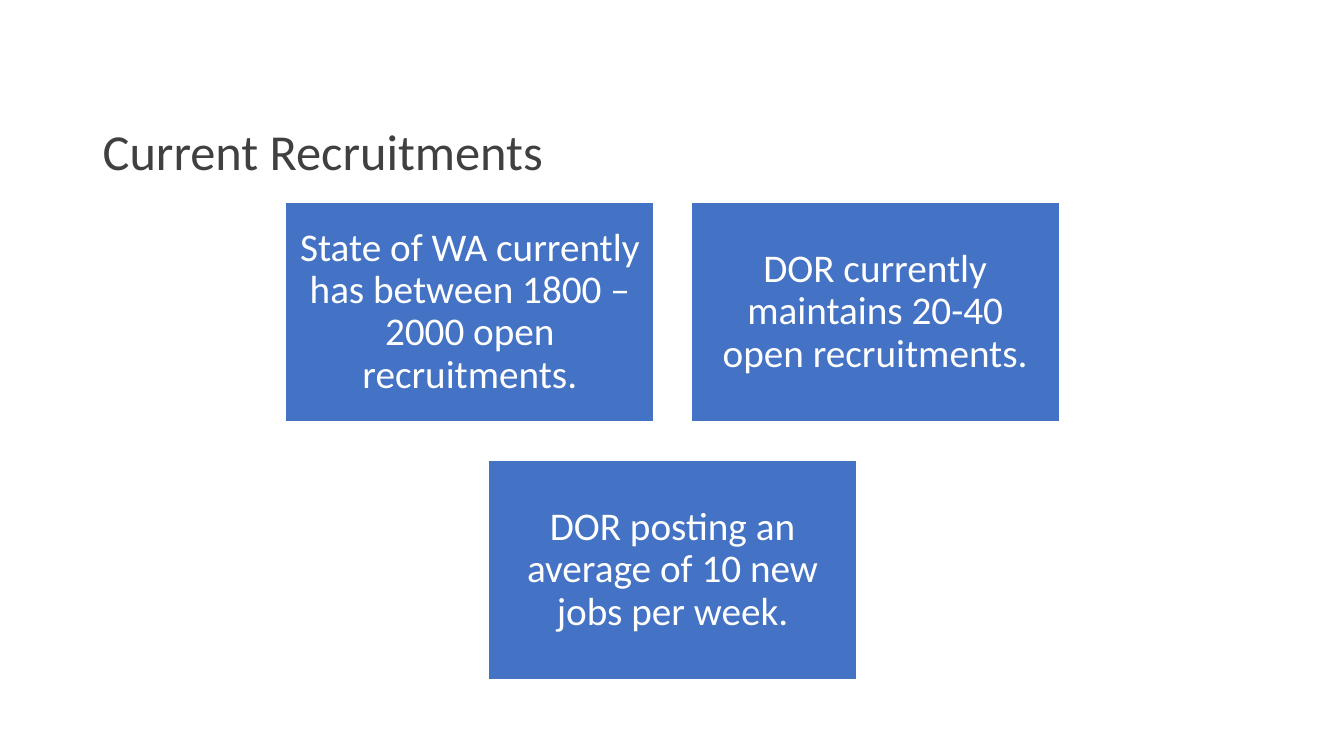
from pptx import Presentation
from pptx.dml.color import RGBColor
from pptx.enum.shapes import MSO_SHAPE
from pptx.enum.text import MSO_ANCHOR, PP_ALIGN
from pptx.util import Pt

PX = 9144  # 100 px to the inch
RECTANGLE = MSO_SHAPE.RECTANGLE
BOTTOM, MIDDLE = MSO_ANCHOR.BOTTOM, MSO_ANCHOR.MIDDLE
LEFT, CENTER = PP_ALIGN.LEFT, PP_ALIGN.CENTER

WHITE = RGBColor(0xFF, 0xFF, 0xFF)
BLUE = RGBColor(0x44, 0x72, 0xC4)
CHARCOAL = RGBColor(0x40, 0x40, 0x40)

SLIDE_WIDTH, SLIDE_HEIGHT = 1333, 750
CARD_WIDTH, CARD_HEIGHT = 366, 219
COLUMN_GAP, ROW_GAP = 36, 37
CARDS_CENTER, CARDS_TOP = 667, 200

FACT_ROWS = [
    [
        "State of WA currently has between 1800 – 2000 open recruitments.",
        "DOR currently maintains 20-40 open recruitments.",
    ],
    ["DOR posting an average of 10 new jobs per week."],
]


class SlideBuilder:
    font_name = "Calibri"
    line_spacing = 0.9

    def __init__(self, slide):
        self.shapes = slide.shapes

    def _box(self, left, top, width, height):
        return [length * PX for length in (left, top, width, height)]

    def _write(self, shape, words, size, color, align, anchor, inset_x, inset_y):
        frame = shape.text_frame
        paragraph = frame.paragraphs[0]
        paragraph.text = words
        formats = {
            frame: {
                "word_wrap": True,
                "vertical_anchor": anchor,
                "margin_left": inset_x * PX,
                "margin_right": inset_x * PX,
                "margin_top": inset_y * PX,
                "margin_bottom": inset_y * PX,
            },
            paragraph: {"alignment": align, "line_spacing": self.line_spacing},
            paragraph.runs[0].font: {"name": self.font_name, "size": Pt(size)},
        }
        for target, values in formats.items():
            for attribute, value in values.items():
                setattr(target, attribute, value)
        paragraph.runs[0].font.color.rgb = color

    def title(self, words, *box):
        heading = self.shapes.add_textbox(*self._box(*box))
        self._write(heading, words, 36, CHARCOAL, LEFT, BOTTOM, 10, 5)

    def card(self, words, *box):
        card = self.shapes.add_shape(RECTANGLE, *self._box(*box))
        card.shadow.inherit = False
        card.fill.solid()
        card.fill.fore_color.rgb = BLUE
        card.line.color.rgb = WHITE
        card.line.width = Pt(1.5)
        self._write(card, words, 28, WHITE, CENTER, MIDDLE, 12, 12)

    def card_rows(self, rows):
        """Stack rows of cards, each row centred on the same axis."""
        for row_index, facts in enumerate(rows):
            row_width = len(facts) * (CARD_WIDTH + COLUMN_GAP) - COLUMN_GAP
            row_left = CARDS_CENTER - row_width // 2
            top = CARDS_TOP + row_index * (CARD_HEIGHT + ROW_GAP)
            for column, fact in enumerate(facts):
                left = row_left + column * (CARD_WIDTH + COLUMN_GAP)
                self.card(fact, left, top, CARD_WIDTH, CARD_HEIGHT)


def main():
    presentation = Presentation()
    presentation.slide_width = SLIDE_WIDTH * PX
    presentation.slide_height = SLIDE_HEIGHT * PX
    blank_layout = presentation.slide_layouts[6]
    builder = SlideBuilder(presentation.slides.add_slide(blank_layout))
    builder.title("Current Recruitments", 92, 40, 1150, 145)
    builder.card_rows(FACT_ROWS)
    presentation.save("out.pptx")


if __name__ == "__main__":
    main()
